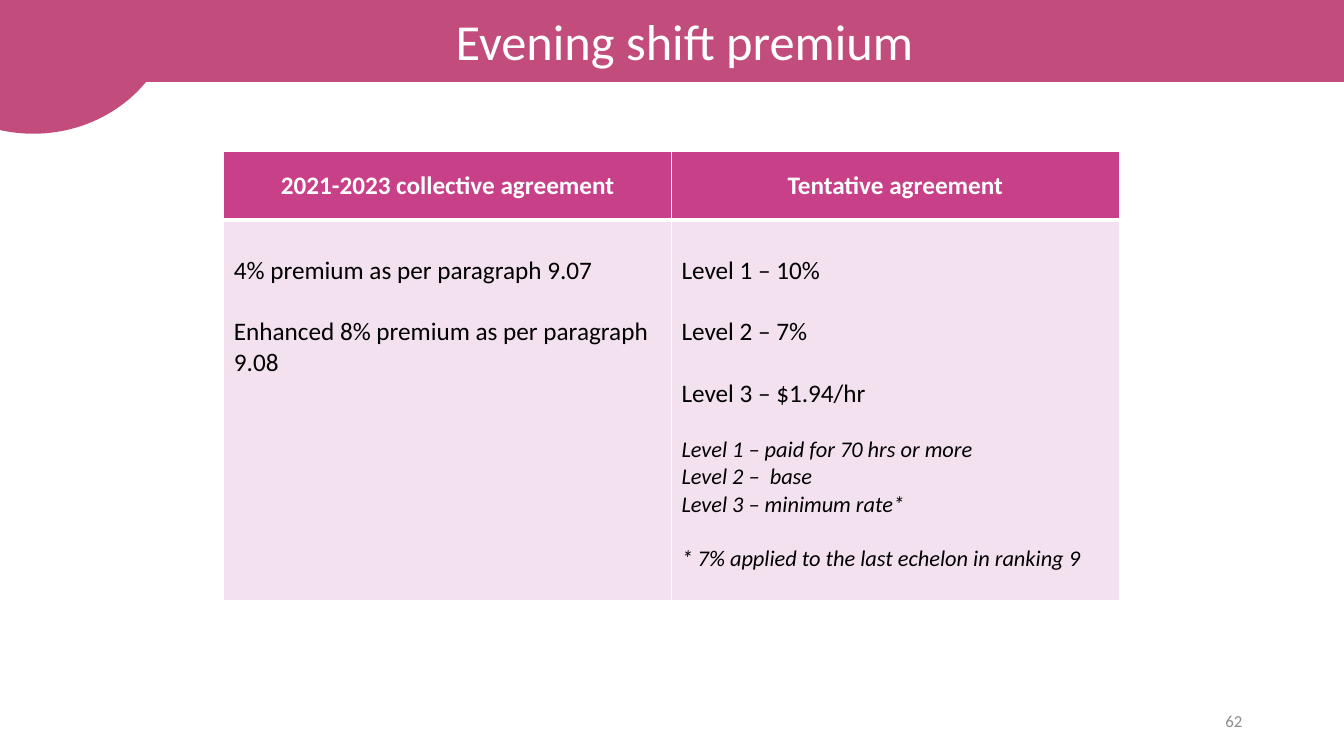
from pptx import Presentation
from pptx.dml.color import RGBColor
from pptx.enum.shapes import MSO_SHAPE
from pptx.enum.text import MSO_ANCHOR, MSO_AUTO_SIZE, PP_ALIGN
from pptx.oxml.ns import qn
from pptx.util import Inches, Pt
from lxml import etree

LEFT, CENTER, RIGHT = PP_ALIGN.LEFT, PP_ALIGN.CENTER, PP_ALIGN.RIGHT
TOP, MIDDLE = MSO_ANCHOR.TOP, MSO_ANCHOR.MIDDLE
NO_AUTOFIT = MSO_AUTO_SIZE.NONE
OVAL = MSO_SHAPE.OVAL

FONT = "Calibri"
ROSE, MAGENTA, PALE_PINK = "C24C7B", "C84087", "F3E1EF"
WHITE, BLACK, GRAY = "FFFFFF", "000000", "8C8C8C"
TITLE_ONLY = 5
GAP, NOTE_GAP = 22, 19.5  # one line of 18 pt and of 16 pt text

HEADINGS = ["2021-2023 collective agreement", "Tentative agreement"]
# Each entry: text, space before in points
CURRENT_PREMIUMS = [
    ("4% premium as per paragraph 9.07", 0),
    ("Enhanced 8% premium as per paragraph 9.08", GAP),
]
NEW_PREMIUMS = [
    ("Level 1 – 10%", 0),
    ("Level 2 – 7%", GAP),
    ("Level 3 – $1.94/hr", GAP),
]
LEVEL_NOTES = [
    ("Level 1 – paid for 70 hrs or more", NOTE_GAP),
    ("Level 2 –  base", 0),
    ("Level 3 – minimum rate*", 0),
    ("* 7% applied to the last echelon in ranking 9", NOTE_GAP),
]


def rgb(value):
    return RGBColor.from_string(value)


def write(paragraph, text, size=18, color=BLACK, bold=False, italic=False,
          align=LEFT, before=0):
    paragraph.alignment = align
    paragraph.space_before = Pt(before)
    run = paragraph.add_run()
    run.text = text
    run.font.name = FONT
    run.font.size = Pt(size)
    run.font.bold = bold
    run.font.italic = italic
    run.font.color.rgb = rgb(color)


def paint(shape, color):
    shape.fill.solid()
    shape.fill.fore_color.rgb = rgb(color)
    shape.line.color.rgb = rgb(color)
    shape.line.width = Pt(1)


def place(shape, left, top, width, height):
    shape.left, shape.top = Inches(left), Inches(top)
    shape.width, shape.height = Inches(width), Inches(height)


def add_title_band(slide, text):
    title = slide.shapes.title
    place(title, 0, 0, 13.58, 0.81)
    paint(title, ROSE)
    title.text_frame.auto_size = NO_AUTOFIT
    title.text_frame.vertical_anchor = MIDDLE
    write(title.text_frame.paragraphs[0], text, size=36, color=WHITE, align=CENTER)


def add_corner_circle(slide):
    circle = slide.shapes.add_shape(
        OVAL, Inches(-1.08), Inches(-1.33), Inches(2.82), Inches(2.65))
    circle.shadow.inherit = False
    paint(circle, ROSE)


def add_page_number(slide, number):
    box = slide.shapes.add_textbox(Inches(9.42), Inches(6.95), Inches(3), Inches(0.4))
    box.text_frame.word_wrap = True
    box.text_frame.vertical_anchor = MIDDLE
    write(box.text_frame.paragraphs[0], number, size=12, color=GRAY, align=RIGHT)


def style_cell(cell, fill, anchor, top_width=1, bottom_width=1):
    # Borders come before the fill in the cell properties
    properties = cell._tc.get_or_add_tcPr()
    widths = {"a:lnL": 1, "a:lnR": 1, "a:lnT": top_width, "a:lnB": bottom_width}
    for side, width in widths.items():
        border = etree.SubElement(properties, qn(side), w=str(Pt(width)))
        solid = etree.SubElement(border, qn("a:solidFill"))
        etree.SubElement(solid, qn("a:srgbClr"), val=WHITE)
    cell.fill.solid()
    cell.fill.fore_color.rgb = rgb(fill)
    cell.vertical_anchor = anchor


def fill_cell(cell, lines, **style):
    for text, before in lines:
        frame = cell.text_frame
        paragraph = frame.paragraphs[0] if not cell.text else frame.add_paragraph()
        write(paragraph, text, before=before, **style)


def add_agreement_table(slide):
    table = slide.shapes.add_table(
        2, 2, Inches(2.22), Inches(1.5), Inches(8.88), Inches(4.46)).table
    for column in table.columns:
        column.width = Inches(4.44)
    table.rows[0].height = Inches(0.68)
    table.rows[1].height = Inches(3.78)

    for index, heading in enumerate(HEADINGS):
        header, body = table.cell(0, index), table.cell(1, index)
        style_cell(header, MAGENTA, MIDDLE, bottom_width=3)
        write(header.text_frame.paragraphs[0], heading,
              color=WHITE, bold=True, align=CENTER)
        style_cell(body, PALE_PINK, TOP, top_width=3)
        body.margin_top = Inches(0.35)

    fill_cell(table.cell(1, 0), CURRENT_PREMIUMS)
    fill_cell(table.cell(1, 1), NEW_PREMIUMS)
    fill_cell(table.cell(1, 1), LEVEL_NOTES, size=16, italic=True)


def main():
    presentation = Presentation()
    presentation.slide_width = Inches(13.33)
    presentation.slide_height = Inches(7.5)
    slide = presentation.slides.add_slide(presentation.slide_layouts[TITLE_ONLY])

    # Header
    add_title_band(slide, "Evening shift premium")
    add_corner_circle(slide)
    # Comparison of the agreements
    add_agreement_table(slide)
    # Footer
    add_page_number(slide, "62")

    presentation.save("out.pptx")


if __name__ == "__main__":
    main()
